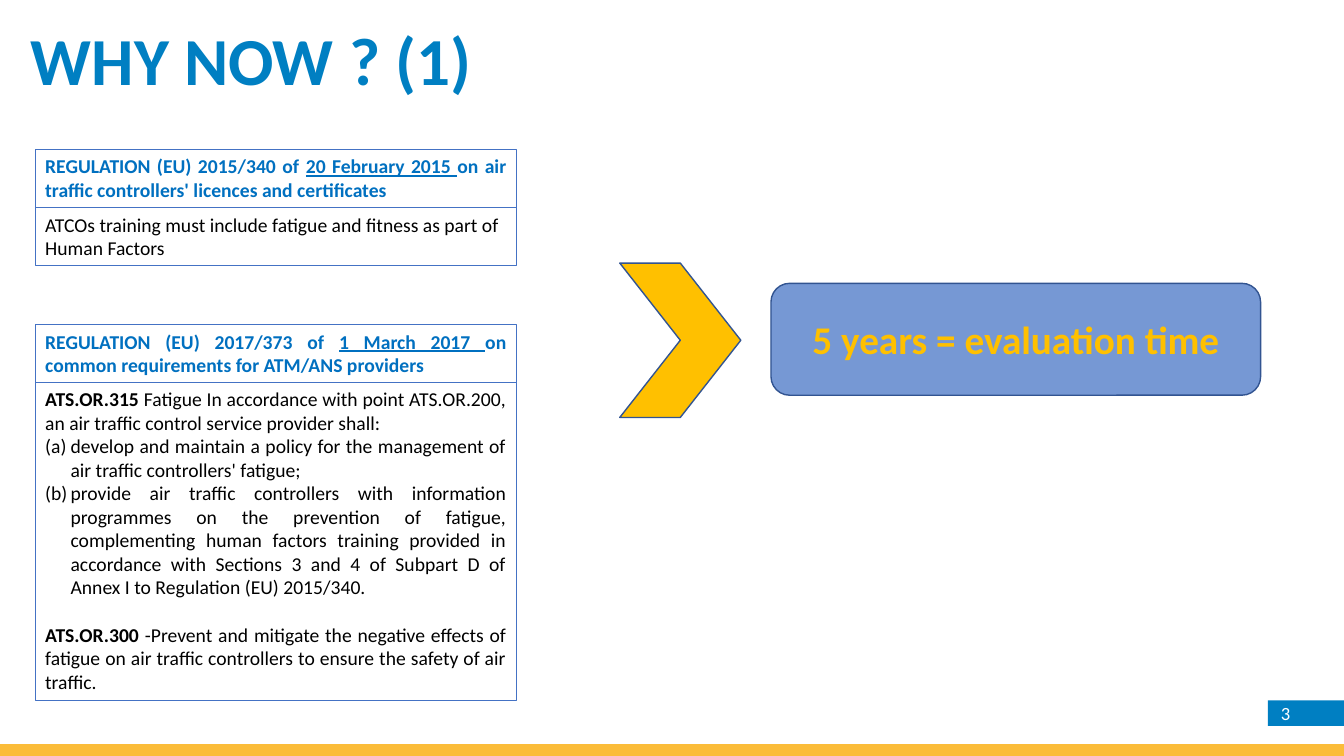
from lxml.etree import SubElement
from pptx import Presentation
from pptx.dml.color import RGBColor
from pptx.enum.shapes import MSO_SHAPE as SHAPE
from pptx.enum.text import MSO_ANCHOR as ANCHOR, PP_ALIGN as ALIGN
from pptx.oxml.ns import qn
from pptx.util import Cm, Pt

COLORS = {
    "amber": "FBBC39", "blue": "007FC2", "heading": "0070C0", "border": "4472C4",
    "gold": "FFC000", "outline": "325491", "panel": "7698D4",
    "white": "FFFFFF", "black": "000000",
}


def add_box(kind, left, top, width, height, fill=None, line=None, line_pt=1):
    sp = s.shapes.add_shape(kind, Cm(left), Cm(top), Cm(width), Cm(height))
    sp.shadow.inherit = False
    for part, color in ((sp.fill, fill), (sp.line.fill, line)):
        if color:
            part.solid()
            part.fore_color.rgb = RGBColor.from_string(COLORS[color])
        else:
            part.background()
    if line:
        sp.line.width = Pt(line_pt)
    sp.text_frame.word_wrap = True
    sp.text_frame.vertical_anchor = ANCHOR.TOP
    return sp


def add_runs(p, runs, size, color, align=ALIGN.LEFT):
    """Fill a paragraph from (text, style) pairs; style holds b and/or u."""
    p.alignment = align
    for text, style in runs:
        r = p.add_run()
        r.text = text
        r.font.name = "Calibri"
        r.font.size = Pt(size)
        r.font.bold = "b" in style
        r.font.underline = "u" in style
        r.font.color.rgb = RGBColor.from_string(COLORS[color])


prs = Presentation()
prs.slide_width, prs.slide_height = Cm(33.87), Cm(19.05)
s = prs.slides.add_slide(prs.slide_layouts[6])

# Footer band and page number
add_box(SHAPE.RECTANGLE, 0, 18.75, 33.87, 0.3, "amber")
page = add_box(SHAPE.RECTANGLE, 31.95, 17.65, 1.92, 0.64, "blue")
tf = page.text_frame
tf.vertical_anchor = ANCHOR.MIDDLE
tf.margin_left = tf.margin_right = Cm(0.33)
tf.margin_top = tf.margin_bottom = Cm(0.18)
add_runs(tf.paragraphs[0], [("3", "")], 13.3, "white")

# Title
title = s.shapes.add_textbox(Cm(0.53), Cm(0.56), Cm(32.66), Cm(2.44))
tf = title.text_frame
tf.word_wrap = True
tf.paragraphs[0].line_spacing = 0.9
add_runs(tf.paragraphs[0], [("WHY NOW ? (1)", "b")], 48, "blue")

# Regulations: a heading box directly above a body box.
# Body paragraphs are (runs, alignment, lettered, space before).
J = ALIGN.JUSTIFY
regulations = [
    (8.18, 1.45, 8.03,
     [("REGULATION (EU) 2017/373 of ", "b"), ("1 March 2017 ", "bu"),
      ("on common requirements for ATM/ANS providers", "b")],
     [([("ATS.OR.315 ", "b"),
        ("Fatigue In accordance with point ATS.OR.200, an air traffic control "
         "service provider shall:", "")], J, False, 0),
      ([("develop and maintain a policy for the management of air traffic "
         "controllers' fatigue;", "")], J, True, 0),
      ([("provide air traffic controllers with information programmes on the "
         "prevention of fatigue, complementing human factors training provided in "
         "accordance with Sections 3 and 4 of Subpart D of Annex I to Regulation "
         "(EU) 2015/340.", "")], J, True, 0),
      ([("ATS.OR.300 ", "b"),
        ("-Prevent and mitigate the negative effects of fatigue on air traffic "
         "controllers to ensure the safety of air traffic.", "")], J, False, 17)]),
    (3.76, 1.47, 1.45,
     [("REGULATION (EU) 2015/340 of ", "b"), ("20 February 2015 ", "bu"),
      ("on air traffic controllers' licences and certificates", "b")],
     [([("ATCOs training must include fatigue and fitness as part of Human Factors",
         "")], ALIGN.LEFT, False, 0)]),
]
for top, head_h, body_h, heading, body in regulations:
    head = add_box(SHAPE.RECTANGLE, 0.89, top, 12.12, head_h, line="border", line_pt=0.75)
    add_runs(head.text_frame.paragraphs[0], heading, 14, "heading", J)
    box = add_box(SHAPE.RECTANGLE, 0.89, top + head_h, 12.12, body_h,
                  line="border", line_pt=0.75)
    tf = box.text_frame
    for i, (runs, align, lettered, gap) in enumerate(body):
        p = tf.add_paragraph() if i else tf.paragraphs[0]
        if lettered:
            pPr = p._p.get_or_add_pPr()
            pPr.set("marL", str(Cm(0.64)))
            pPr.set("indent", str(-Cm(0.64)))
            SubElement(pPr, qn("a:buFont"), typeface="+mj-lt")
            SubElement(pPr, qn("a:buAutoNum"), type="alphaLcParenBoth")
        if gap:
            p.space_before = Pt(gap)
        add_runs(p, runs, 14, "black", align)

# Conclusion
add_box(SHAPE.CHEVRON, 15.62, 6.63, 3.05, 3.89, "gold", "outline")
conclusion = add_box(SHAPE.ROUNDED_RECTANGLE, 19.43, 7.14, 12.34, 2.82, "panel", "outline")
conclusion.text_frame.vertical_anchor = ANCHOR.MIDDLE
add_runs(conclusion.text_frame.paragraphs[0], [("5 years = evaluation time", "b")],
         28, "gold", ALIGN.CENTER)

prs.save("out.pptx")
